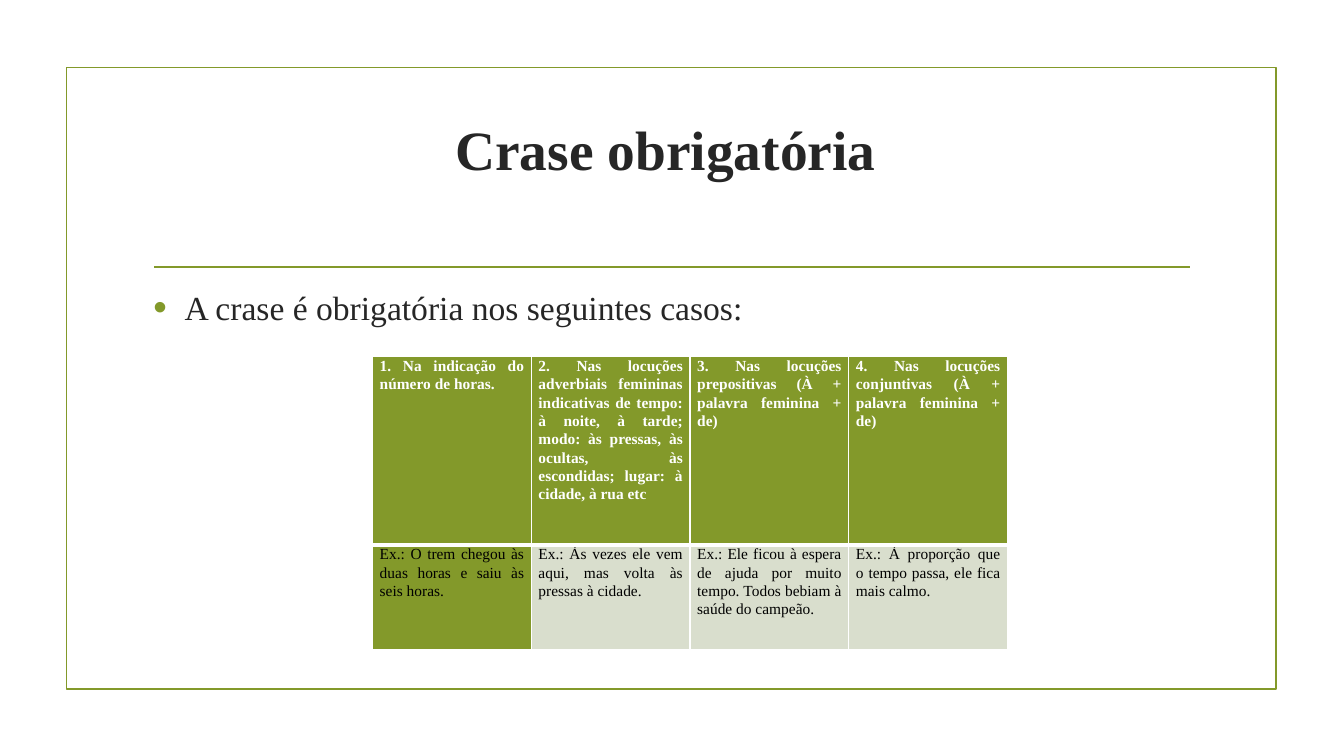
from dataclasses import dataclass

import pptx
import pptx.dml.color
import pptx.enum.shapes
import pptx.enum.text
import pptx.oxml
import pptx.oxml.ns
import pptx.util
from pptx.util import Cm

ALIGN = pptx.enum.text.PP_ALIGN
ANCHOR = pptx.enum.text.MSO_ANCHOR


@dataclass(frozen=True)
class Theme:
    font: str = "Times New Roman"
    olive: str = "83992A"
    pale: str = "D9DECD"
    ink: str = "262626"
    black: str = "000000"
    white: str = "FFFFFF"
    title_size: float = 39.6
    body_size: float = 24
    table_size: float = 11
    line_width: float = 1.25


def rgb(value):
    return pptx.dml.color.RGBColor.from_string(value)


def xml(markup):
    return pptx.oxml.parse_xml(
        markup.replace(" ", f" {pptx.oxml.ns.nsdecls('a')} ", 1))


class SlideBuilder:
    def __init__(self, presentation, theme):
        self.theme = theme
        self.slide = presentation.slides.add_slide(presentation.slide_layouts[1])

    def place(self, shape, left, top, width, height):
        shape.left, shape.top = Cm(left), Cm(top)
        shape.width, shape.height = Cm(width), Cm(height)

    def style(self, paragraph, size, color, bold=False):
        for run in paragraph.runs:
            run.font.name = self.theme.font
            run.font.size = pptx.util.Pt(size)
            run.font.bold = bold
            run.font.color.rgb = rgb(color)

    def outline(self, line):
        line.color.rgb = rgb(self.theme.olive)
        line.width = pptx.util.Pt(self.theme.line_width)

    def frame(self, left, top, width, height):
        border = self.slide.shapes.add_shape(
            pptx.enum.shapes.MSO_SHAPE.RECTANGLE,
            Cm(left), Cm(top), Cm(width), Cm(height))
        border.shadow.inherit = False
        border.fill.background()
        self.outline(border.line)

    def rule(self, left, right, y):
        divider = self.slide.shapes.add_connector(
            pptx.enum.shapes.MSO_CONNECTOR.STRAIGHT,
            Cm(left), Cm(y), Cm(right), Cm(y))
        self.outline(divider.line)
        divider._element.spPr.append(xml("<a:effectLst />"))

    def title(self, text, *box):
        heading = self.slide.shapes.title
        self.place(heading, *box)
        frame = heading.text_frame
        frame.text = text
        frame.auto_size = pptx.enum.text.MSO_AUTO_SIZE.NONE
        frame.vertical_anchor = ANCHOR.MIDDLE
        # Larger insets raise the heading and move it slightly left
        frame.margin_bottom, frame.margin_right = Cm(1.73), Cm(0.6)
        frame.paragraphs[0].alignment = ALIGN.CENTER
        self.style(frame.paragraphs[0], self.theme.title_size, self.theme.ink, True)

    def bullet(self, text, *box):
        body = self.slide.placeholders[1]
        self.place(body, *box)
        frame = body.text_frame
        frame.text = text
        frame.auto_size = pptx.enum.text.MSO_AUTO_SIZE.NONE
        frame.vertical_anchor = ANCHOR.TOP
        item = frame.paragraphs[0]
        item.space_before, item.space_after = pptx.util.Pt(0), pptx.util.Pt(6)
        properties = item._p.get_or_add_pPr()
        properties.set("marL", str(Cm(0.79)))
        properties.set("indent", str(Cm(-0.79)))
        for markup in (
            f'<a:buClr ><a:srgbClr val="{self.theme.olive}"/></a:buClr>',
            '<a:buSzPct val="115000"/>',
            '<a:buFont typeface="Arial"/>',
            '<a:buChar char="•"/>',
        ):
            properties.append(xml(markup))
        self.style(item, self.theme.body_size, self.theme.ink)

    def cell(self, cell, text, fill, color, bold, borders):
        cell.margin_left = cell.margin_right = Cm(0.18)
        cell.margin_top = cell.margin_bottom = 0
        cell.vertical_anchor = ANCHOR.TOP
        for side, points in borders.items():
            cell._tc.get_or_add_tcPr().append(xml(
                f'<a:ln{side} w="{pptx.util.Pt(points)}"><a:solidFill>'
                f'<a:srgbClr val="{self.theme.white}"/></a:solidFill></a:ln{side}>'))
        cell.fill.solid()
        cell.fill.fore_color.rgb = rgb(fill)
        cell.text_frame.text = text
        paragraph = cell.text_frame.paragraphs[0]
        paragraph.alignment = ALIGN.JUSTIFY
        paragraph.line_spacing = 1.07
        self.style(paragraph, self.theme.table_size, color, bold)

    def table(self, rows, left, top, column_width, row_heights):
        theme = self.theme
        columns = len(rows[0])
        grid = self.slide.shapes.add_table(
            len(rows), columns, Cm(left), Cm(top),
            Cm(column_width * columns), Cm(sum(row_heights))).table
        grid.first_row = grid.horz_banding = False
        for column in grid.columns:
            column.width = Cm(column_width)
        for r, (texts, height) in enumerate(zip(rows, row_heights)):
            grid.rows[r].height = Cm(height)
            header = r == 0
            borders = {"L": 1, "R": 1, "T": 1 if header else 3, "B": 3 if header else 1}
            for c, text in enumerate(texts):
                self.cell(grid.cell(r, c), text,
                          theme.olive if header or c == 0 else theme.pale,
                          theme.white if header else theme.black, header, borders)


CASES = [
    ("1. Na indicação do número de horas.",
     "Ex.: O trem chegou às duas horas e saiu às seis horas."),
    ("2. Nas locuções adverbiais femininas indicativas de tempo: à noite, à tarde; "
     "modo: às pressas, às ocultas, às escondidas; lugar: à cidade, à rua etc",
     "Ex.: Às vezes ele vem aqui, mas volta às pressas à cidade."),
    ("3. Nas locuções prepositivas (À + palavra feminina + de)",
     "Ex.: Ele ficou à espera de ajuda por muito tempo. "
     "Todos bebiam à saúde do campeão."),
    ("4. Nas locuções conjuntivas (À + palavra feminina + de)",
     "Ex.: À proporção que o tempo passa, ele fica mais calmo."),
]


def main():
    presentation = pptx.Presentation()
    presentation.slide_width, presentation.slide_height = Cm(33.87), Cm(19.05)
    builder = SlideBuilder(presentation, Theme())

    # Frame and divider
    builder.frame(1.68, 1.7, 30.48, 15.67)
    builder.rule(3.89, 30, 6.73)

    # Heading and introduction
    builder.title("Crase obrigatória", 3.61, 2.72, 26.67, 3.63)
    builder.bullet("A crase é obrigatória nos seguintes casos:", 3.61, 7.11, 26.67, 9.22)

    # Cases above, examples below
    builder.table(list(zip(*CASES)), 9.39, 8.98, 4.0, (4.75, 2.64))

    presentation.save("out.pptx")


if __name__ == "__main__":
    main()
